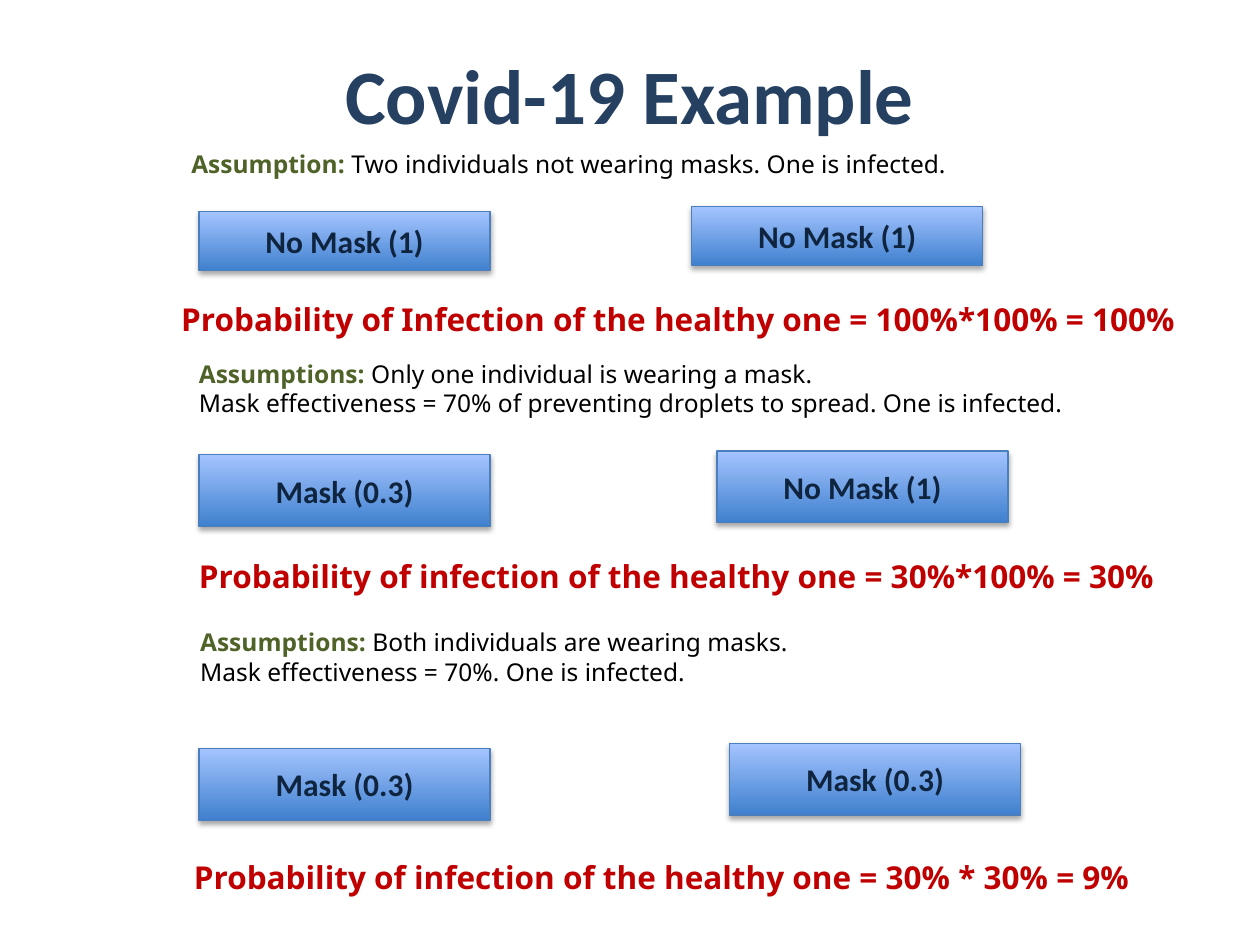
from lxml import etree
from pptx import Presentation
from pptx import util as u
from pptx.dml.color import RGBColor
from pptx.enum import shapes, text
from pptx.oxml.ns import qn

COLORS = {
    "title": "254061",
    "label": "0F243E",
    "assumption": "4F6228",
    "body": "000000",
    "result": "C00000",
    "box_bottom": "3F80CE",
    "box_top": "A4C4FF",
    "box_line": "4B7EBC",
    "shadow": "000000",
}
BOX_WIDTH = 2.31
LEFT_BOX = 1.58

SCENARIOS = [
    {
        "assumption": (1.42, 1.13, 6.46, 0.34, "Assumption: ",
                       ["Two individuals not wearing masks. One is infected."]),
        "boxes": [(LEFT_BOX, 1.68, 0.47, "No Mask (1)"),
                  (5.49, 1.64, 0.47, "No Mask (1)")],
        "result": (1.34, 2.33, 8.43,
                   "Probability of Infection of the healthy one = 100%*100% = 100%"),
    },
    {
        "assumption": (1.48, 2.8, 7.72, 0.57, "Assumptions: ",
                       ["Only one individual is wearing a mask.",
                        "Mask effectiveness = 70% of preventing droplets to spread. "
                        "One is infected."]),
        "boxes": [(LEFT_BOX, 3.61, 0.57, "Mask (0.3)"),
                  (5.69, 3.58, 0.57, "No Mask (1)")],
        "result": (1.48, 4.37, 8.02,
                   "Probability of infection of the healthy one = 30%*100% = 30%"),
    },
    {
        "assumption": (1.49, 4.93, 7.72, 0.57, "Assumptions: ",
                       ["Both individuals are wearing masks.",
                        "Mask effectiveness = 70%. One is infected."]),
        "boxes": [(LEFT_BOX, 5.94, 0.57, "Mask (0.3)"),
                  (5.79, 5.9, 0.57, "Mask (0.3)")],
        "result": (1.44, 6.76, 7.87,
                   "Probability of infection of the healthy one = 30% * 30% = 9%"),
    },
]


def color(name):
    return RGBColor.from_string(COLORS[name])


def format_run(run, size, font, color_name, bold):
    run.font.size = u.Pt(size)
    run.font.name = font
    run.font.bold = bold
    run.font.color.rgb = color(color_name)


def set_title(slide, words):
    title = slide.shapes.title
    title.left, title.top = u.Inches(0.5), u.Inches(0.3)
    title.width, title.height = u.Inches(9), u.Inches(0.88)
    frame = title.text_frame
    frame.text = words
    frame.vertical_anchor = text.MSO_ANCHOR.MIDDLE
    paragraph = frame.paragraphs[0]
    paragraph.alignment = text.PP_ALIGN.CENTER
    format_run(paragraph.runs[0], 44, "Calibri", "title", True)


def add_shadow(shape):
    shape.shadow.inherit = False
    effects = shape._element.spPr.find(qn("a:effectLst"))
    shadow = etree.SubElement(
        effects, qn("a:outerShdw"), blurRad=str(u.Pt(3.1)),
        dist=str(u.Pt(1.8)), dir="5400000", rotWithShape="0")
    shade = etree.SubElement(shadow, qn("a:srgbClr"), val=COLORS["shadow"])
    etree.SubElement(shade, qn("a:alpha"), val="35000")


def add_mask_box(slide, left, top, height, label):
    shape = slide.shapes.add_shape(
        shapes.MSO_SHAPE.RECTANGLE, u.Inches(left), u.Inches(top),
        u.Inches(BOX_WIDTH), u.Inches(height))
    shape.fill.gradient()
    shape.fill.gradient_angle = 90
    for stop, position, name in zip(
            shape.fill.gradient_stops, (0, 1), ("box_bottom", "box_top")):
        stop.position = position
        stop.color.rgb = color(name)
    shape.line.color.rgb = color("box_line")
    shape.line.width = u.Pt(0.75)
    add_shadow(shape)
    frame = shape.text_frame
    frame.text = label
    frame.vertical_anchor = text.MSO_ANCHOR.MIDDLE
    paragraph = frame.paragraphs[0]
    paragraph.alignment = text.PP_ALIGN.CENTER
    format_run(paragraph.runs[0], 18, "Calibri", "label", True)


def add_text_frame(slide, left, top, width, height):
    box = slide.shapes.add_textbox(
        u.Inches(left), u.Inches(top), u.Inches(width), u.Inches(height))
    box.text_frame.word_wrap = True
    box.text_frame.auto_size = text.MSO_AUTO_SIZE.SHAPE_TO_FIT_TEXT
    return box.text_frame


def add_assumption(slide, left, top, width, height, lead, lines):
    frame = add_text_frame(slide, left, top, width, height)
    frame.text = lead
    first = frame.paragraphs[0]
    format_run(first.runs[0], 14, "Noto Sans", "assumption", True)
    for index, line in enumerate(lines):
        paragraph = frame.add_paragraph() if index else first
        run = paragraph.add_run()
        run.text = line
        format_run(run, 14, "Noto Sans", "body", False)


def add_result(slide, left, top, width, words):
    frame = add_text_frame(slide, left, top, width, 0.4)
    frame.text = words
    format_run(frame.paragraphs[0].runs[0], 18, "Noto Sans", "result", True)


def main():
    presentation = Presentation()
    presentation.slide_width = u.Inches(10)
    presentation.slide_height = u.Inches(7.5)
    slide = presentation.slides.add_slide(presentation.slide_layouts[5])
    set_title(slide, "Covid-19 Example")
    for scenario in SCENARIOS:
        add_assumption(slide, *scenario["assumption"])
        for box in scenario["boxes"]:
            add_mask_box(slide, *box)
        add_result(slide, *scenario["result"])
    presentation.save("out.pptx")


if __name__ == "__main__":
    main()
